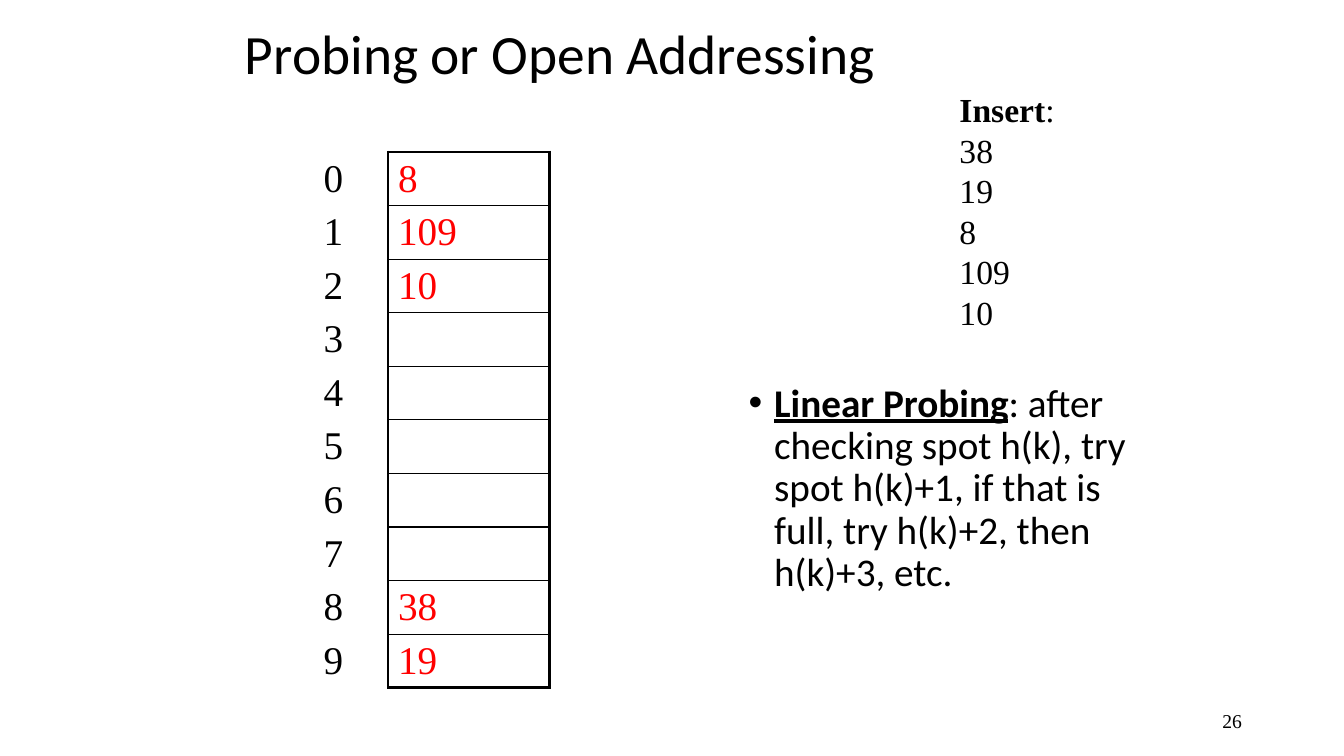
import pptx
import pptx.util
import pptx.dml.color
import pptx.enum.text
import pptx.oxml
import pptx.oxml.ns
from dataclasses import dataclass
from pptx.util import Cm

# Content
TITLE = "Probing or Open Addressing"
SLOTS = ["8", "109", "10", "", "", "", "", "", "38", "19"]
INSERTS = ["38", "19", "8", "109", "10"]
RULE_NAME = "Linear Probing"
RULE_TEXT = (": after checking spot h(k), try spot h(k)+1, "
             "if that is full, try h(k)+2, then h(k)+3, etc.")
PAGE_NUMBER = "26"


@dataclass(frozen=True)
class Theme:
    black: str = "000000"
    red: str = "FF0000"
    sans: str = "Calibri"
    serif: str = "Times New Roman"
    title: float = 39.6
    body: float = 28
    list: float = 24
    number: float = 14
    thin: float = 1
    thick: float = 2.25


THEME = Theme()
ANCHOR = pptx.enum.text.MSO_ANCHOR
ALIGN = pptx.enum.text.PP_ALIGN


def add_span(para, text, size, font, color=THEME.black, bold=False, underline=False):
    span = para.add_run()
    span.text = text
    span.font.size = pptx.util.Pt(size)
    span.font.name = font
    span.font.bold = bold
    span.font.underline = underline
    span.font.color.rgb = pptx.dml.color.RGBColor.from_string(color)


def add_box(page, left, top, width, height):
    box = page.shapes.add_textbox(Cm(left), Cm(top), Cm(width), Cm(height))
    box.text_frame.word_wrap = True
    return box.text_frame


def set_borders(cell, **widths):
    """Draw the given sides (L, R, T, B) and leave the others empty."""
    properties = cell._tc.get_or_add_tcPr()
    for index, side in enumerate("LRTB"):
        width = widths.get(side, 0)
        paint = (f'<a:solidFill><a:srgbClr val="{THEME.black}"/></a:solidFill>'
                 if width else "<a:noFill/>")
        properties.insert(index, pptx.oxml.parse_xml(
            f'<a:ln{side} {pptx.oxml.ns.nsdecls("a")} '
            f'w="{int(pptx.util.Pt(width))}">{paint}</a:ln{side}>'))


def fill_cell(cell, text, color):
    cell.fill.background()
    cell.vertical_anchor = ANCHOR.MIDDLE
    cell.margin_top = cell.margin_bottom = 0
    if text:
        add_span(cell.text_frame.paragraphs[0], text, THEME.body, THEME.serif, color)


def add_hash_table(page):
    row_height = 1.35
    columns = [1.88, 4.06]
    table = page.shapes.add_table(
        len(SLOTS), len(columns), Cm(7.9), Cm(3.83),
        Cm(sum(columns)), Cm(row_height * len(SLOTS))).table
    table.first_row = table.horz_banding = False
    for column, width in zip(table.columns, columns):
        column.width = Cm(width)
    last = len(SLOTS) - 1
    for index, value in enumerate(SLOTS):
        table.rows[index].height = Cm(row_height)
        label, slot = table.cell(index, 0), table.cell(index, 1)
        fill_cell(label, str(index), THEME.black)
        fill_cell(slot, value, THEME.red)
        set_borders(label, R=THEME.thin)
        set_borders(slot, L=THEME.thin, R=THEME.thick,
                    T=THEME.thick if index == 0 else THEME.thin,
                    B=THEME.thick if index == last else THEME.thin)


def main():
    deck = pptx.Presentation()
    deck.slide_width, deck.slide_height = Cm(33.87), Cm(19.05)
    page = deck.slides.add_slide(deck.slide_layouts[5])

    # Title
    title = page.shapes.title
    title.left, title.top, title.width, title.height = Cm(5.92), Cm(0.48), Cm(21.59), Cm(1.91)
    title.text_frame.vertical_anchor = ANCHOR.MIDDLE
    para = title.text_frame.paragraphs[0]
    para.alignment = ALIGN.LEFT
    para.line_spacing = 0.9
    add_span(para, TITLE, THEME.title, THEME.sans)

    # Hash table
    add_hash_table(page)

    # Keys to insert
    frame = add_box(page, 23.93, 2.11, 3.45, 6.4)
    para = frame.paragraphs[0]
    add_span(para, "Insert", THEME.list, THEME.serif, bold=True)
    add_span(para, ":", THEME.list, THEME.serif)
    for key in INSERTS:
        add_span(frame.add_paragraph(), key, THEME.list, THEME.serif)
    for para in frame.paragraphs:
        para.line_spacing = pptx.util.Pt(29)

    # Probing rule
    para = add_box(page, 18.62, 9.53, 10.36, 7.62).paragraphs[0]
    para.line_spacing = 0.9
    add_span(para, RULE_NAME, THEME.body, THEME.sans, bold=True, underline=True)
    add_span(para, RULE_TEXT, THEME.body, THEME.sans)
    properties = para._p.get_or_add_pPr()
    indent = int(Cm(0.64))
    properties.set("marL", str(indent))
    properties.set("indent", str(-indent))
    for bullet in ('buFont {} typeface="Arial"', 'buChar {} char="•"'):
        properties.append(pptx.oxml.parse_xml(
            f'<a:{bullet.format(pptx.oxml.ns.nsdecls("a"))}/>'))

    # Page number
    frame = add_box(page, 23.93, 17.65, 7.62, 1.02)
    frame.vertical_anchor = ANCHOR.MIDDLE
    para = frame.paragraphs[0]
    para.alignment = ALIGN.RIGHT
    add_span(para, PAGE_NUMBER, THEME.number, THEME.serif)

    deck.save("out.pptx")


if __name__ == "__main__":
    main()
